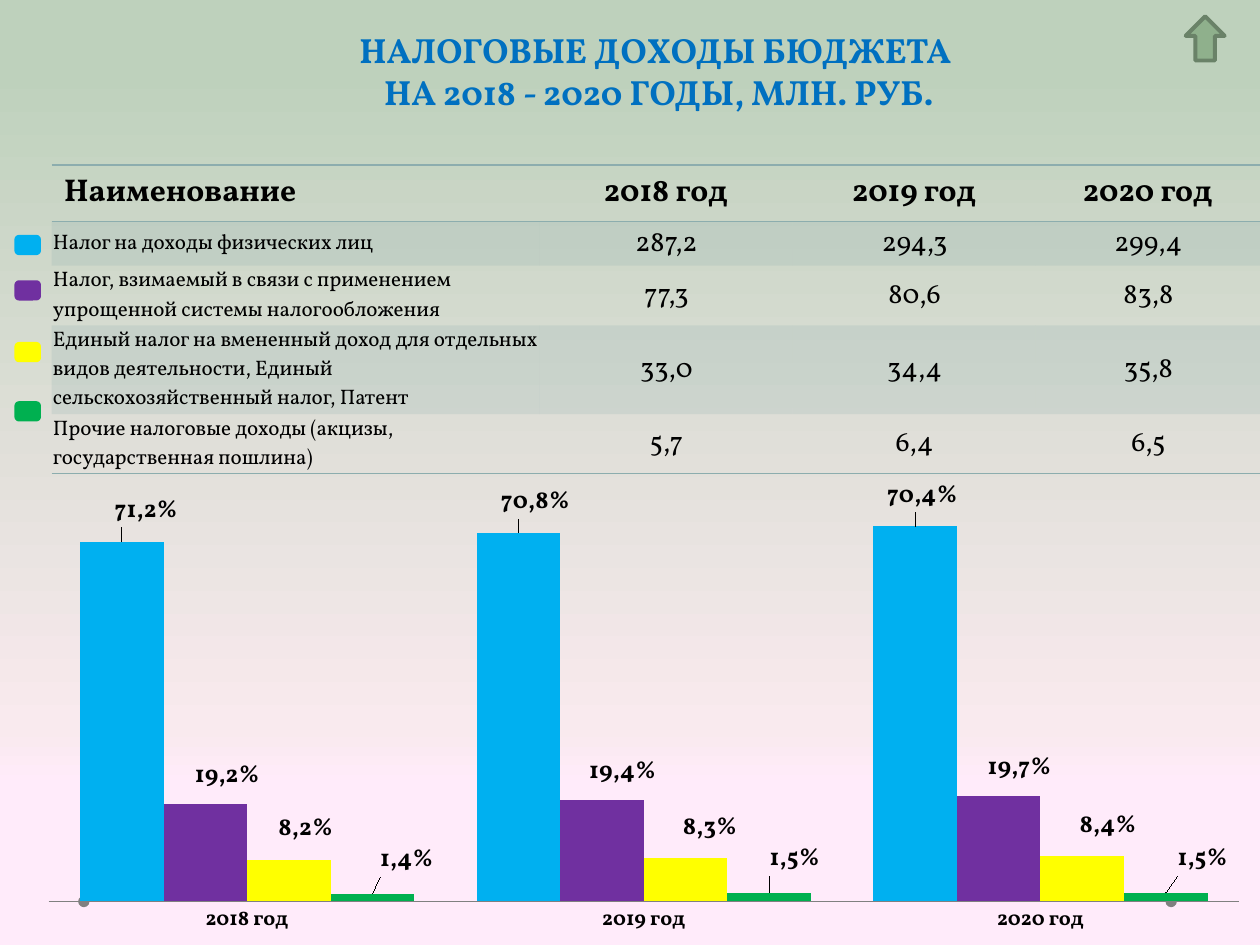
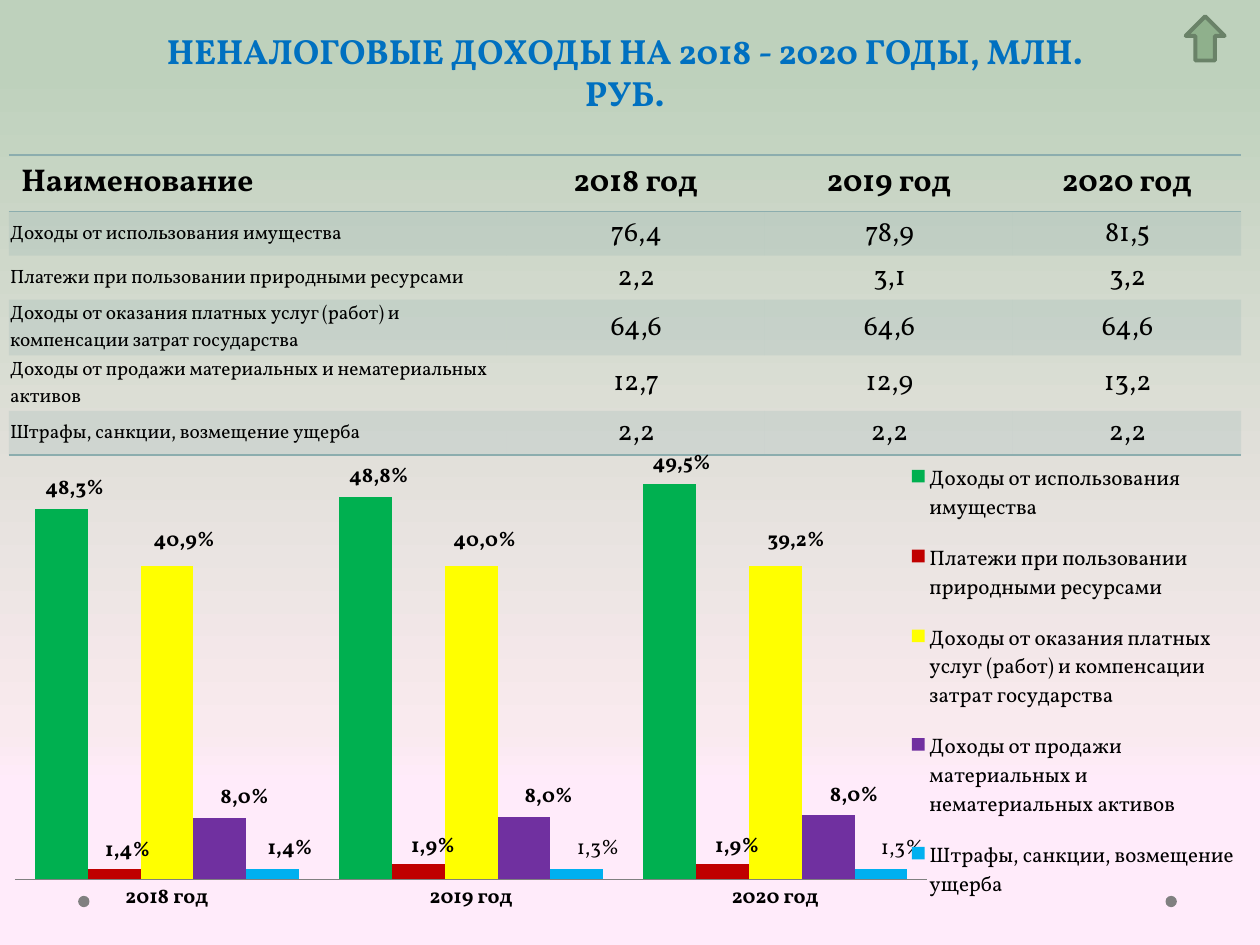
from copy import deepcopy

from lxml import etree
from pptx import Presentation
from pptx.chart import data as cd
from pptx.dml.color import RGBColor
from pptx.enum import chart as ch, shapes, text
from pptx.oxml.ns import qn
from pptx.util import Inches, Pt

# Shared look
FONT = "Vollkorn"
BLACK = RGBColor(0, 0, 0)
TITLE = RGBColor(0x00, 0x70, 0xC0)
GRAY = RGBColor(0x80, 0x80, 0x80)
TEAL = RGBColor(0x8C, 0xAD, 0xAE)
SAGE = RGBColor(0x8F, 0xB0, 0x8C)
MOSS = RGBColor(0x6A, 0x82, 0x68)
BLUE = RGBColor(0x00, 0xB0, 0xF0)
PURPLE = RGBColor(0x70, 0x30, 0xA0)
YELLOW = RGBColor(0xFF, 0xFF, 0x00)
GREEN = RGBColor(0x00, 0xB0, 0x50)
RED = RGBColor(0xC0, 0x00, 0x00)
STOPS = [(0.17, RGBColor(0xFF, 0xEB, 0xFA)),
         (0.23, RGBColor(0xF9, 0xEA, 0xEE)),
         (0.93, RGBColor(0xBE, 0xD1, 0xBC))]
PLAIN = "{2D5ABB26-0587-4C30-8999-92F81FD0307C}"  # no style, no grid
TENTHS = "#,##0.0"
C15 = "http://schemas.microsoft.com/office/drawing/2012/chart"
YEARS = ["2018 год", "2019 год", "2020 год"]
HEAD = ["Наименование"] + YEARS

# Table rows
TAXES = [
    ("Налог на доходы физических лиц", "287,2", "294,3", "299,4"),
    ("Налог, взимаемый в связи с применением упрощенной системы "
     "налогообложения", "77,3", "80,6", "83,8"),
    ("Единый налог на вмененный доход для отдельных видов деятельности, "
     "Единый сельскохозяйственный налог, Патент", "33,0", "34,4", "35,8"),
    ("Прочие налоговые доходы (акцизы, государственная пошлина)",
     "5,7", "6,4", "6,5"),
]
OTHERS = [
    ("Доходы от использования имущества", "76,4", "78,9", "81,5"),
    ("Платежи при пользовании природными ресурсами", "2,2", "3,1", "3,2"),
    ("Доходы от оказания платных услуг (работ) и компенсации затрат "
     "государства", "64,6", "64,6", "64,6"),
    ("Доходы от продажи материальных и нематериальных активов",
     "12,7", "12,9", "13,2"),
    ("Штрафы, санкции, возмещение ущерба", "2,2", "2,2", "2,2"),
]

# Chart series: colour, values, labels, label shifts right and up (percent)
TAX_BARS = [
    (BLUE, (287.2, 294.3, 299.4), ("71,2%", "70,8%", "70,4%"),
     (2, 1.4, 0.6), 1.8),
    (PURPLE, (77.3, 80.6, 83.8), ("19,2%", "19,4%", "19,7%"),
     (1.8, 1.7, 1.7), 1.2),
    (YELLOW, (33, 34.4, 35.8), ("8,2%", "8,3%", "8,4%"),
     (1.4, 2, 2.1), 1.7),
    (GREEN, (5.7, 6.4, 6.5), ("1,4%", "1,5%", "1,5%"),
     (2.8, 2.1, 3), 2.4),
]
OTHER_BARS = [
    (GREEN, (76.4, 78.9, 81.5), ("48,3%", "48,8%", "49,5%"),
     (1.1, 1.1, 1), 0),
    (RED, (2.2, 3.1, 3.1), ("1,4%", "1,9%", "1,9%"),
     (1.1, 1.2, 1.2), -0.5),
    (YELLOW, (64.6, 64.6, 64.6), ("40,9%", "40,0%", "39,2%"),
     (1.4, 1.1, 1.7), 1.1),
    (PURPLE, (12.7, 12.9, 13.2), ("8,0%", "8,0%", "8,0%"),
     (2, 2, 2.1), 0),
    (BLUE, (2.2, 2.2, 2.2), ("1,4%", "1,3%", "1,3%"),
     (1.4, 1.7, 1.7), 0),
]


def style(font, size, bold=False, color=BLACK):
    font.name, font.size, font.bold = FONT, Pt(size), bold
    font.color.rgb = color


def box(*sides):
    return [Inches(side) for side in sides]


def paint(master):
    """Vertical gradient behind every slide."""
    fill = master.background.fill
    fill.gradient()
    fill.gradient_angle = 90
    stops = master.element.find(".//" + qn("p:bg")).find(".//" + qn("a:gsLst"))
    stops.append(deepcopy(stops[0]))
    for stop, (place, color) in zip(fill.gradient_stops, STOPS):
        stop.position = place
        stop.color.rgb = color


def add_mark(slide, kind, place, color, edge=None):
    mark = slide.shapes.add_shape(kind, *box(*place))
    mark.shadow.inherit = False
    mark.fill.solid()
    mark.fill.fore_color.rgb = color
    if edge is None:
        mark.line.fill.background()
    else:
        mark.line.color.rgb = edge
        mark.line.width = Pt(2.25)


def add_page(deck, title, left, width, height):
    """Slide with the shared title style, dots and arrow."""
    slide = deck.slides.add_slide(deck.slide_layouts[5])
    for x in (9.25, 0.62):
        add_mark(slide, shapes.MSO_SHAPE.OVAL, (x, 7.11, 0.09, 0.09), GRAY)
    head = slide.shapes.title
    head.left, head.top, head.width, head.height = box(
        left, 0.01, width, height)
    frame = head.text_frame
    frame.text = title
    frame.word_wrap = True
    frame.auto_size = text.MSO_AUTO_SIZE.NONE
    frame.vertical_anchor = text.MSO_ANCHOR.BOTTOM
    para = frame.paragraphs[0]
    para.alignment = text.PP_ALIGN.CENTER
    para.line_spacing = 1.0
    style(para.font, 20, True, TITLE)
    add_mark(slide, shapes.MSO_SHAPE.UP_ARROW, (9.41, 0.13, 0.31, 0.35),
             SAGE, MOSS)
    return slide


def add_rules(cell, sides):
    """Thin lines on the given sides (T, B) of a cell."""
    props = cell._tc.get_or_add_tcPr()
    for spot, side in enumerate(sides):
        line = etree.Element(qn("a:ln" + side), w=str(Pt(1)))
        fill = etree.SubElement(line, qn("a:solidFill"))
        etree.SubElement(fill, qn("a:srgbClr"), val=str(TEAL))
        props.insert(spot, line)


def tint(cell):
    cell.fill.solid()
    cell.fill.fore_color.rgb = TEAL
    color = cell._tc.tcPr.find(".//" + qn("a:srgbClr"))
    etree.SubElement(color, qn("a:alpha"), val="20000")


def add_grid(slide, left, top, widths, rows, size):
    """Table with a ruled head and every other row tinted."""
    heights = [0.41] + [0.35] * len(rows)
    grid = slide.shapes.add_table(
        len(heights), len(widths),
        *box(left, top, sum(widths), sum(heights))).table
    grid._tbl.tblPr.find(qn("a:tableStyleId")).text = PLAIN
    for col, width in zip(grid.columns, widths):
        col.width = Inches(width)
    for r, (height, words) in enumerate(zip(heights, [HEAD] + rows)):
        grid.rows[r].height = Inches(height)
        for c, word in enumerate(words):
            cell = grid.cell(r, c)
            cell.text = word
            para = cell.text_frame.paragraphs[0]
            if c:
                para.alignment = text.PP_ALIGN.CENTER
            if r % 2:
                tint(cell)
            else:
                cell.fill.background()
            if r == 0:
                style(para.font, 18, True)
                add_rules(cell, "TB")
                continue
            style(para.font, 16 if c else size)
            cell.vertical_anchor = text.MSO_ANCHOR.MIDDLE
            cell.margin_left, cell.margin_right = box(0.01, 0)
            cell.margin_top, cell.margin_bottom = box(0.01, 0)
            if r == len(rows):
                add_rules(cell, "B")


def lay_out(parent, spot, inner=False, **parts):
    """Manual layout of a chart part, in percent of the chart."""
    for old in parent.findall(qn("c:layout")):
        parent.remove(old)
    layout = etree.Element(qn("c:layout"))
    manual = etree.SubElement(layout, qn("c:manualLayout"))
    if inner:
        etree.SubElement(manual, qn("c:layoutTarget"), val="inner")
    if "w" in parts:
        for mode in ("xMode", "yMode"):
            etree.SubElement(manual, qn("c:" + mode), val="edge")
    for key, part in parts.items():
        etree.SubElement(manual, qn("c:" + key), val=str(round(part / 100, 4)))
    parent.insert(spot, layout)


def drop_leaders(chart):
    """No lines between bars and moved labels."""
    for labels in chart.element.iter(qn("c:dLbls")):
        exts = etree.SubElement(labels, qn("c:extLst"))
        ext = etree.SubElement(exts, qn("c:ext"), nsmap={"c15": C15},
                               uri="{CE6537A1-D6FC-4f65-9D91-7224C49458BB}")
        etree.SubElement(ext, "{%s}showLeaderLines" % C15, val="0")


def add_bars(slide, place, names, bars, peak, size, plot, light=()):
    """Column chart; light holds (series, point) of labels not in bold."""
    data = cd.CategoryChartData(number_format=TENTHS)
    data.categories = YEARS
    for name, bar in zip(names, bars):
        data.add_series(name, bar[1])
    chart = slide.shapes.add_chart(
        ch.XL_CHART_TYPE.COLUMN_CLUSTERED, *box(*place), data).chart
    style(chart.font, 10)
    chart.has_title = chart.has_legend = False
    group = chart.plots[0]
    group.gap_width, group.overlap = 75, 0
    group.vary_by_categories = False

    # Axes
    value, years = chart.value_axis, chart.category_axis
    value.minimum_scale, value.maximum_scale = 0, peak
    value.has_major_gridlines = value.visible = False
    value.tick_labels.number_format = TENTHS
    value.tick_labels.number_format_is_linked = False
    years.major_tick_mark = ch.XL_TICK_MARK.NONE
    years.format.line.color.rgb = GRAY
    years.format.line.width = Pt(0.5)
    style(years.tick_labels.font, 12, True)

    # Bars and their labels
    for s, (series, (color, _, labels, _, _)) in enumerate(
            zip(group.series, bars)):
        series.format.fill.solid()
        series.format.fill.fore_color.rgb = color
        series.data_labels.show_value = True
        series.data_labels.number_format = TENTHS
        series.data_labels.number_format_is_linked = False
        for p, word in enumerate(labels):
            label = series.points[p].data_label
            label.text_frame.text = word
            label.position = ch.XL_LABEL_POSITION.OUTSIDE_END
            run = label.text_frame.paragraphs[0].runs[0]
            style(run.font, size, (s, p) not in light)
    shifts = [(x, -up) for *_, right, up in bars for x in right]
    for label, (x, y) in zip(chart.element.iter(qn("c:dLbl")), shifts):
        lay_out(label, 1, x=x, y=y)
    drop_leaders(chart)
    area = chart.element.find(".//" + qn("c:plotArea"))
    lay_out(area, 0, True, **dict(zip("xywh", plot)))
    return chart


def add_legend(chart, x, y, w, h):
    chart.has_legend = True
    legend = chart.legend
    legend.position = ch.XL_LEGEND_POSITION.BOTTOM
    legend.include_in_layout = False
    style(legend.font, 12)
    part = chart.element.find(".//" + qn("c:legend"))
    lay_out(part, 1, x=x, y=y, w=w, h=h)


def main():
    deck = Presentation()
    deck.slide_width, deck.slide_height = box(10, 7.5)
    paint(deck.slide_master)

    # Tax revenue
    slide = add_page(deck, "НАЛОГОВЫЕ ДОХОДЫ БЮДЖЕТА \v"
                     "НА 2018 - 2020 ГОДЫ, МЛН. РУБ.", 0.48, 9.5, 0.93)
    names = [f"Series {n}" for n in range(1, len(TAX_BARS) + 1)]
    add_bars(slide, (0.19, 3.59, 9.84, 3.91), names,
             TAX_BARS, 350, 14, (2, 2.2, 96, 88.9))
    add_grid(slide, 0.41, 1.31, (3.87, 2.01, 1.93, 1.78), TAXES, 12)
    for top, bar in zip((1.88, 2.24, 2.73, 3.2), TAX_BARS):
        add_mark(slide, shapes.MSO_SHAPE.ROUNDED_RECTANGLE,
                 (0.13, top, 0.18, 0.13), bar[0], bar[0])

    # Other revenue
    slide = add_page(deck, "НЕНАЛОГОВЫЕ ДОХОДЫ НА 2018 - 2020 ГОДЫ, МЛН. РУБ.",
                     1.22, 7.48, 0.94)
    add_grid(slide, 0.07, 1.23, (3.95, 2.05, 1.97, 1.81), OTHERS, 11)
    chart = add_bars(slide, (0, 3.51, 9.88, 3.86), [row[0] for row in OTHERS],
                     OTHER_BARS, 90, 12, (1.2, 0.1, 73.3, 89.8),
                     light=((4, 1), (4, 2)))
    add_legend(chart, 72.7, 0.3, 27, 98.5)

    deck.save("out.pptx")


if __name__ == "__main__":
    main()
